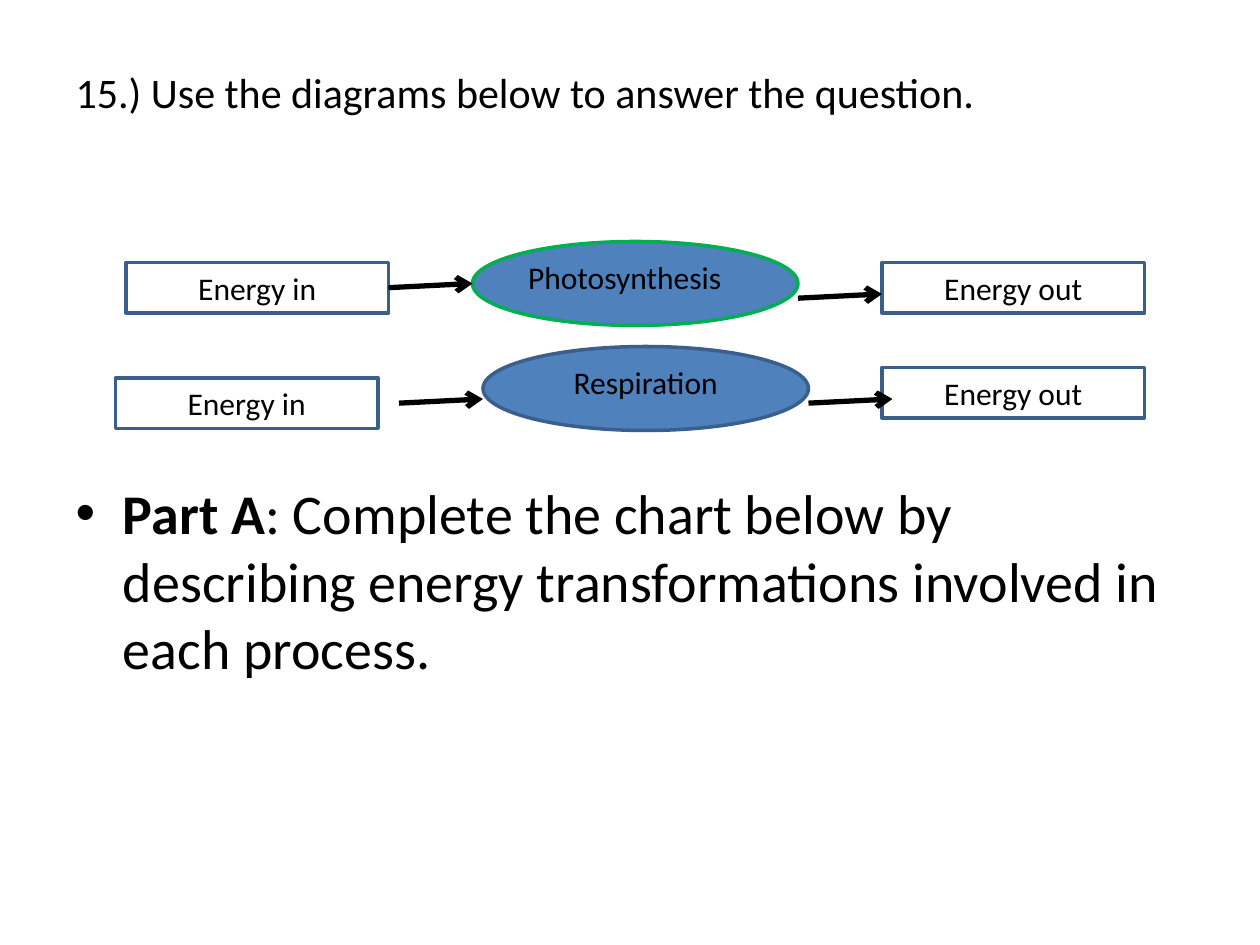
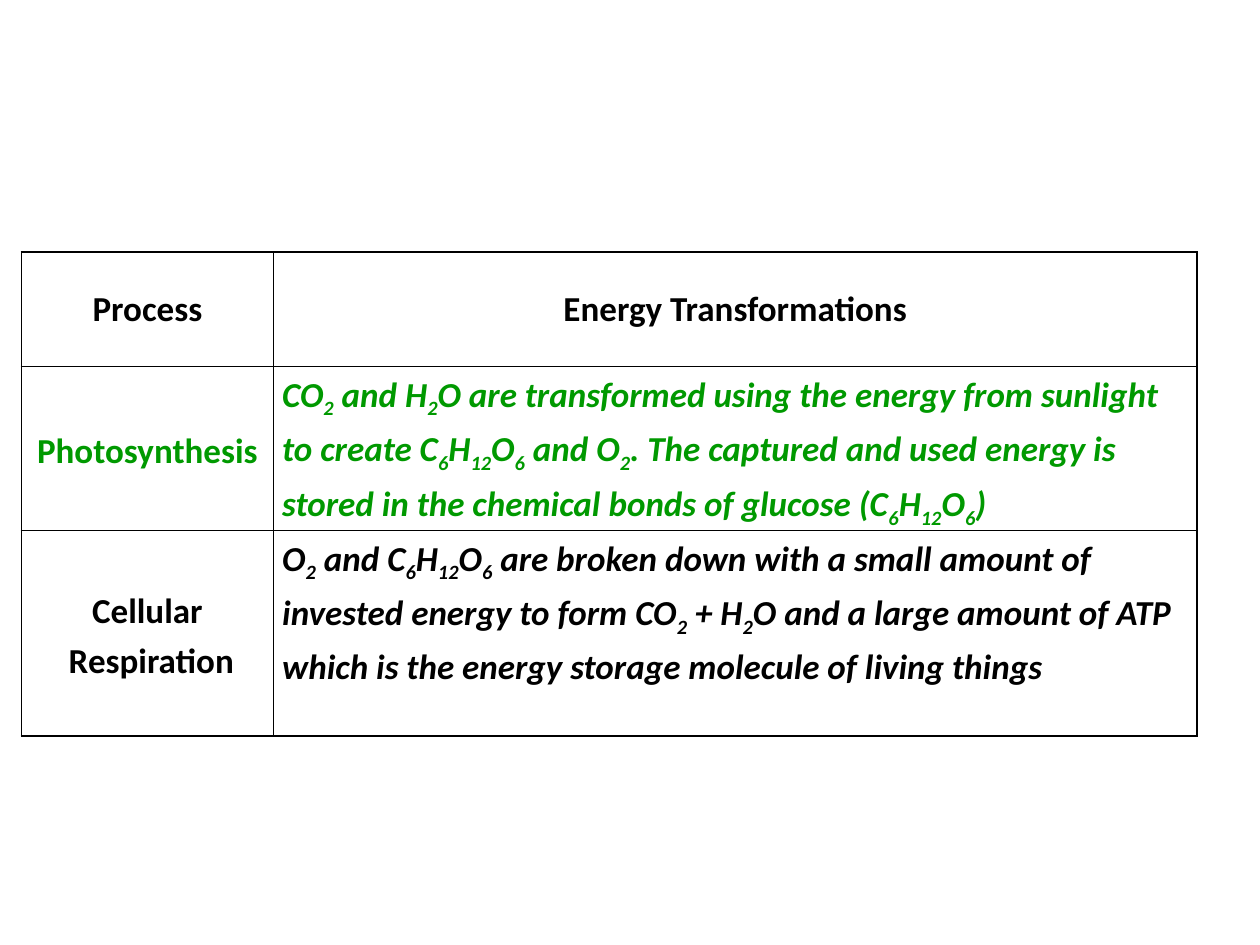
from itertools import groupby

from lxml.etree import SubElement
from pptx import Presentation
from pptx.dml.color import RGBColor
from pptx.enum.shapes import MSO_CONNECTOR, MSO_SHAPE
from pptx.enum.text import MSO_ANCHOR, PP_ALIGN
from pptx.oxml import parse_xml
from pptx.oxml.ns import nsdecls, qn
from pptx.util import Inches, Pt

FONT = "Calibri"
BLACK = RGBColor(0, 0, 0)
BLUE = RGBColor(0x4F, 0x81, 0xBD)
DARK_BLUE = RGBColor(0x3A, 0x5F, 0x8C)
OUTLINE_GREEN = RGBColor(0x00, 0xB0, 0x50)
TEXT_GREEN = RGBColor(0x00, 0x99, 0x00)


def grid(*steps):
    """Turn steps of a twelfth of an inch into lengths."""
    return [Inches(step / 12) for step in steps]


def style(paragraph, size, color=BLACK, align=PP_ALIGN.CENTER, bold=None):
    paragraph.alignment = align
    font = paragraph.font
    font.name, font.size, font.bold = FONT, Pt(size), bold
    font.color.rgb = color


presentation = Presentation()
presentation.slide_width = Inches(10)
presentation.slide_height = Inches(7.5)

# Slide 1: question and energy diagrams
slide = presentation.slides.add_slide(presentation.slide_layouts[1])
title = slide.shapes.title
title.left, title.top, title.width, title.height = grid(6, 3.6, 108, 15)
title.text_frame.text = "15.) Use the diagrams below to answer the question."
title.text_frame.vertical_anchor = MSO_ANCHOR.MIDDLE
title.text_frame.margin_bottom = Inches(0.45)
style(title.text_frame.paragraphs[0], 24, align=PP_ALIGN.LEFT)

body = slide.placeholders[1]
body.left, body.top, body.width, body.height = grid(6, 45, 108, 35.4)
task = body.text_frame.paragraphs[0]
style(task, 32, align=PP_ALIGN.LEFT)
part = task.add_run()
part.text = "Part A"
part.font.bold = True
task.add_run().text = ": Complete the chart below by describing energy transformations involved in each process."

# Name, outline, then grid positions of ellipse, label, input box and output box
processes = [
    ("Photosynthesis", OUTLINE_GREEN, (45, 23), (47, 24), (12, 25), (84, 25)),
    ("Respiration", DARK_BLUE, (46, 33), (49, 34), (11, 36), (84, 35)),
]
ELLIPSE_SIZE = (31, 8)
BOX_SIZE = (25, 4.8)
ARROW_RUN = 8
ARROW_RISE = 0.4

for name, outline, ellipse_at, label_at, input_at, output_at in processes:
    ellipse = slide.shapes.add_shape(MSO_SHAPE.OVAL, *grid(*ellipse_at, *ELLIPSE_SIZE))
    ellipse.shadow.inherit = False
    ellipse.fill.solid()
    ellipse.fill.fore_color.rgb = BLUE
    ellipse.line.color.rgb = outline
    ellipse.line.width = Pt(2)

    boxes = []
    for text, position in [("Energy in", input_at), ("Energy out", output_at), (name, label_at)]:
        box = slide.shapes.add_textbox(*grid(*position, *BOX_SIZE))
        box.text_frame.word_wrap = True
        box.text_frame.text = text
        style(box.text_frame.paragraphs[0], 18)
        boxes.append(box)
    for box in boxes[:2]:
        box.line.color.rgb = DARK_BLUE
        box.line.width = Pt(2)

    left, top = ellipse_at
    arrow_ends = [
        (left, top + (4 if name == "Photosynthesis" else 5)),
        (left + ELLIPSE_SIZE[0] + ARROW_RUN, top + 5),
    ]
    arrows = []
    for x, y in arrow_ends:
        arrow = slide.shapes.add_connector(
            MSO_CONNECTOR.STRAIGHT, *grid(x - ARROW_RUN, y + ARROW_RISE, x, y))
        arrow.line.color.rgb = BLACK
        arrow.line.width = Pt(3)
        SubElement(arrow.line._get_or_add_ln(), qn("a:tailEnd"), type="arrow")
        SubElement(arrow._element.spPr, qn("a:effectLst"))
        arrows.append(arrow)
    if name == "Photosynthesis":
        arrows[0].begin_connect(boxes[0], 3)

# Slide 2: table of energy transformations
slide = presentation.slides.add_slide(presentation.slide_layouts[6])
rows = [
    ("Process", "Energy Transformations", BLACK, 0.91),
    ("Photosynthesis",
     "CO2 and H2O are transformed using the energy from sunlight to create C6H12O6 and O2. "
     "The captured and used energy is stored in the chemical bonds of glucose (C6H12O6)",
     TEXT_GREEN, 1.3),
    ("Cellular\n Respiration",
     "O2 and C6H12O6 are broken down with a small amount of invested energy to form CO2 + H2O "
     "and a large amount of ATP which is the energy storage molecule of living things",
     BLACK, 1.63),
]
table = slide.shapes.add_table(
    len(rows), 2, Inches(0.17), Inches(2), Inches(9.33), Inches(3.84)).table
table.first_row = table.horz_banding = False
table.columns[0].width = Inches(2)
table.columns[1].width = Inches(7.33)

for row_index, (process, transformation, color, height) in enumerate(rows):
    table.rows[row_index].height = Inches(height)
    for column_index, text in enumerate((process, transformation)):
        cell = table.cell(row_index, column_index)
        is_description = row_index > 0 and column_index == 1
        cell.margin_left = cell.margin_right = Inches(0.07)
        cell.margin_top = cell.margin_bottom = 0
        cell.vertical_anchor = MSO_ANCHOR.TOP if is_description else MSO_ANCHOR.MIDDLE
        for side in ("lnL", "lnR", "lnT", "lnB"):
            cell._tc.get_or_add_tcPr().append(parse_xml(
                f'<a:{side} {nsdecls("a")} w="12700"><a:solidFill>'
                f'<a:srgbClr val="{BLACK}"/></a:solidFill></a:{side}>'))
        cell.fill.background()
        if is_description:
            paragraph = cell.text_frame.paragraphs[0]
            # Every number in a description is a subscript of a formula
            for is_subscript, letters in groupby(text, str.isdigit):
                run = paragraph.add_run()
                run.text = "".join(letters)
                if is_subscript:
                    run._r.get_or_add_rPr().set("baseline", "-25000")
        else:
            cell.text_frame.text = text
        for paragraph in cell.text_frame.paragraphs:
            style(paragraph, 20, color, PP_ALIGN.LEFT if is_description else PP_ALIGN.CENTER, True)
            paragraph.font.italic = is_description
            if row_index > 0:
                paragraph.line_spacing = 1.15

presentation.save("out.pptx")
